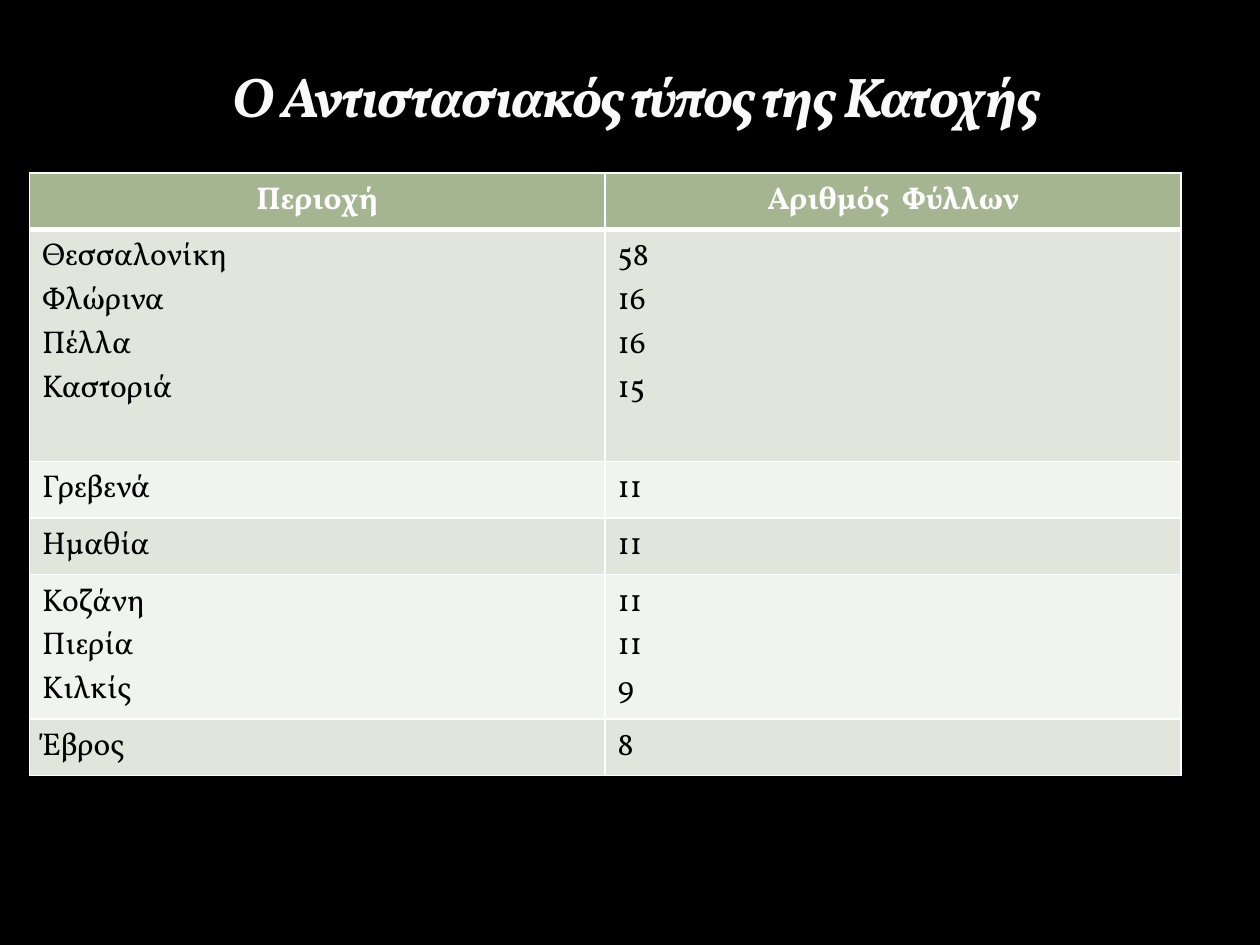
from dataclasses import dataclass

from lxml.etree import SubElement
from pptx import Presentation
from pptx.dml.color import RGBColor
from pptx.enum.text import MSO_ANCHOR, PP_ALIGN
from pptx.oxml.ns import qn
from pptx.util import Pt


@dataclass(frozen=True)
class Theme:
    font: str = "Vollkorn"
    title_size: float = 32
    table_size: float = 18
    background: str = "000000"
    title: str = "F9F9F9"
    outline: str = "3C4422"
    header: str = "A5B592"
    bands: tuple = ("E1E5DC", "F0F3EE")
    light: str = "FFFFFF"
    dark: str = "000000"
    line_height: float = 25.1
    cell_padding: float = 7.2


class Deck:
    """Hold the theme and the current slide, and draw its elements."""

    def __init__(self, prs, theme):
        self.theme = theme
        self.s = prs.slides.add_slide(prs.slide_layouts[5])
        fill = self.s.background.fill
        fill.solid()
        fill.fore_color.rgb = RGBColor.from_string(theme.background)

    def line(self, parent, tag, color, width, alpha=None):
        ln = SubElement(parent, qn(tag), w=str(Pt(width)))
        fill = SubElement(ln, qn("a:solidFill"))
        clr = SubElement(fill, qn("a:srgbClr"), val=color)
        if alpha is not None:
            SubElement(clr, qn("a:alpha"), val=str(alpha * 1000))
        SubElement(ln, qn("a:prstDash"), val="solid")
        return ln

    def text(self, tf, lines, align, color, **font):
        for i, line in enumerate(lines):
            p = tf.paragraphs[0] if i == 0 else tf.add_paragraph()
            p.alignment = align
            r = p.add_run()
            r.text = line
            for name, value in {"name": self.theme.font, **font}.items():
                setattr(r.font, name, value)
            r.font.color.rgb = RGBColor.from_string(color)

    def title(self, text, left, top, width, height):
        t = self.theme
        sp = self.s.shapes.title
        box = {"left": left, "top": top, "width": width, "height": height}
        for name, value in box.items():
            setattr(sp, name, Pt(value))
        tf = sp.text_frame
        frame = {"word_wrap": True, "vertical_anchor": MSO_ANCHOR.TOP,
                 "margin_top": Pt(35), "margin_bottom": 0}
        for name, value in frame.items():
            setattr(tf, name, value)
        self.text(tf, [text], PP_ALIGN.CENTER, t.title,
                  size=Pt(t.title_size), bold=True, italic=True)
        rPr = tf.paragraphs[0].runs[0].font._element
        rPr.set("spc", "-100")
        rPr.insert(0, self.line(rPr, "a:ln", t.outline, 0.25, 25))

    def cell(self, cell, lines, fill, color, align, bold, bottom):
        t = self.theme
        self.text(cell.text_frame, lines, align, color,
                  size=Pt(t.table_size), bold=bold)
        tcPr = cell._tc.get_or_add_tcPr()
        for side, width in zip("LRTB", (1, 1, 1, bottom)):
            self.line(tcPr, f"a:ln{side}", t.light, width)
        cell.fill.solid()
        cell.fill.fore_color.rgb = RGBColor.from_string(fill)

    def table(self, header, groups, left, top, width):
        t = self.theme
        counts = [1] + [count for count, _ in groups]
        heights = [t.cell_padding + t.line_height * n for n in counts]
        table = self.s.shapes.add_table(
            len(counts), len(header), Pt(left), Pt(top), Pt(width),
            Pt(sum(heights))).table
        for row, height in zip(table.rows, heights):
            row.height = Pt(height)
        for j, label in enumerate(header):
            self.cell(table.cell(0, j), [label], t.header, t.light,
                      PP_ALIGN.CENTER, True, 3)
        for i, (_, entries) in enumerate(groups):
            for j, lines in enumerate(zip(*entries)):
                cell = table.cell(i + 1, j)
                self.cell(cell, lines, t.bands[i % 2], t.dark,
                          PP_ALIGN.LEFT, False, 1)
                if i == 0:
                    self.line_top(cell)

    def line_top(self, cell):
        cell._tc.tcPr.find(qn("a:lnT")).set("w", str(Pt(3)))


HEADER = ("Περιοχή", "Αριθμός  Φύλλων")
GROUPS = [
    (5, [("Θεσσαλονίκη", "58"), ("Φλώρινα", "16"),
         ("Πέλλα", "16"), ("Καστοριά", "15")]),
    (1, [("Γρεβενά", "11")]),
    (1, [("Ημαθία", "11")]),
    (3, [("Κοζάνη", "11"), ("Πιερία", "11"), ("Κιλκίς", "9")]),
    (1, [("Έβρος", "8")]),
]


def main():
    prs = Presentation()
    prs.slide_width, prs.slide_height = Pt(720), Pt(540)
    deck = Deck(prs, Theme())
    deck.table(HEADER, GROUPS, 16.8, 98.8, 658)
    deck.title("Ο Αντιστασιακός τύπος της Κατοχής", 39.6, 0, 648, 73.4)
    prs.save("out.pptx")


if __name__ == "__main__":
    main()
